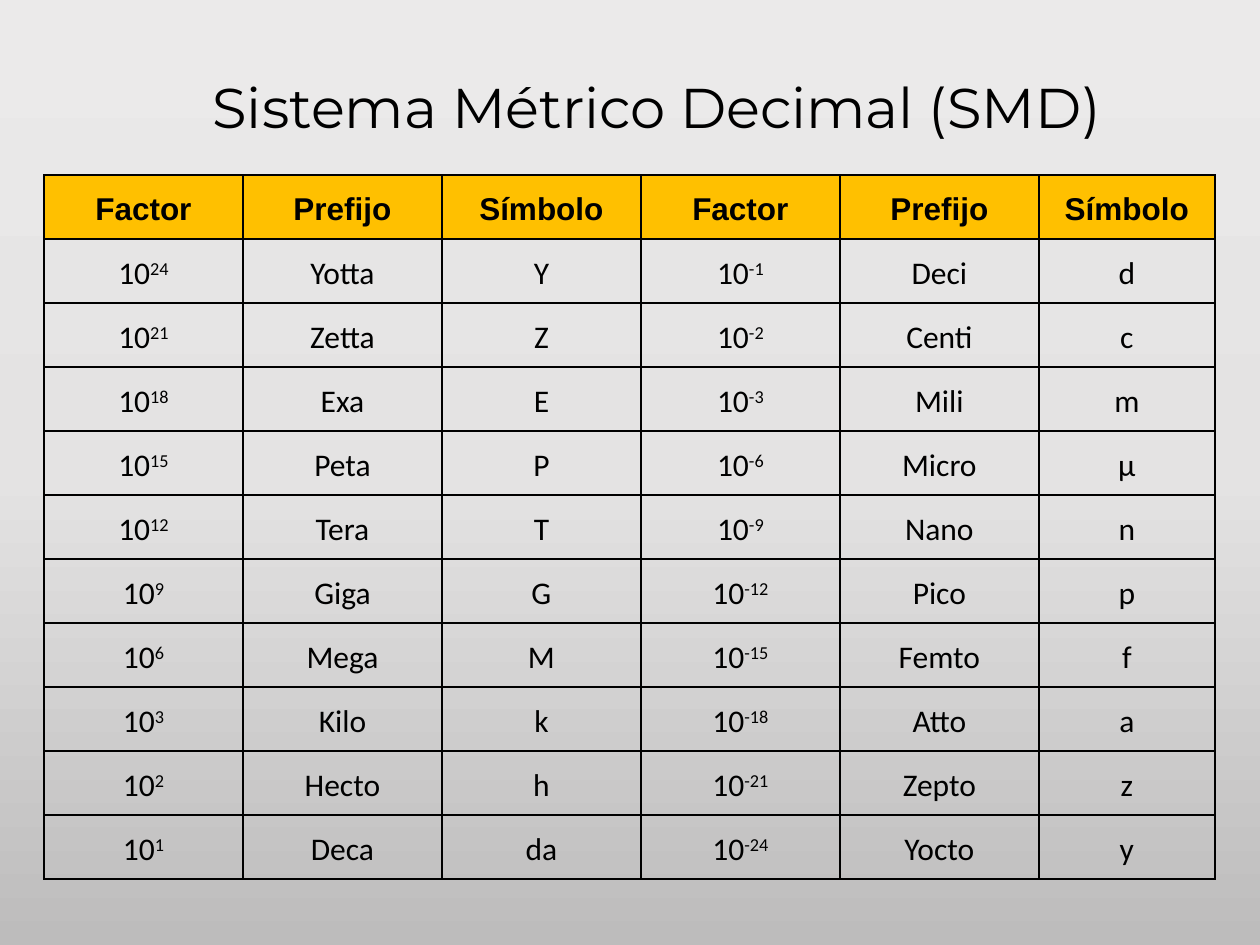
from copy import deepcopy

from lxml.etree import SubElement
from pptx import Presentation
from pptx.dml.color import RGBColor
from pptx.enum.text import MSO_ANCHOR, PP_ALIGN
from pptx.oxml.ns import qn
from pptx.util import Pt

PX = 914400 // 126
BLACK = RGBColor(0x00, 0x00, 0x00)
AMBER = RGBColor(0xFF, 0xC0, 0x00)
BACKGROUND_STOPS = [
    (0, RGBColor(0xEB, 0xEA, 0xEA)),
    (0.5, RGBColor(0xE4, 0xE3, 0xE3)),
    (1, RGBColor(0xBD, 0xBC, 0xBC)),
]

TITLE = "Sistema Métrico Decimal (SMD)"
HEADINGS = ["Factor", "Prefijo", "Símbolo"]
MULTIPLES = [
    (24, "Yotta", "Y"), (21, "Zetta", "Z"), (18, "Exa", "E"), (15, "Peta", "P"),
    (12, "Tera", "T"), (9, "Giga", "G"), (6, "Mega", "M"), (3, "Kilo", "k"),
    (2, "Hecto", "h"), (1, "Deca", "da"),
]
SUBMULTIPLES = [
    (-1, "Deci", "d"), (-2, "Centi", "c"), (-3, "Mili", "m"), (-6, "Micro", "μ"),
    (-9, "Nano", "n"), (-12, "Pico", "p"), (-15, "Femto", "f"), (-18, "Atto", "a"),
    (-21, "Zepto", "z"), (-24, "Yocto", "y"),
]

TITLE_BOX = (20, 66, 1274, 81)
TABLE_LEFT, TABLE_TOP = 44, 175
COLUMN_WIDTHS = [199] * 5 + [176]
ROW_HEIGHT = 64
CELL_MARGIN = 5

TITLE_FONT = {"name": "Montserrat", "size": Pt(32)}
HEADING_FONT = {"name": "Arial", "size": Pt(18), "bold": True}
BODY_FONT = {"name": "Calibri", "size": Pt(18), "bold": False}
CELL_FORMAT = {
    "vertical_anchor": MSO_ANCHOR.MIDDLE,
    **{f"margin_{side}": CELL_MARGIN * PX for side in ("left", "top", "right", "bottom")},
}


def set_all(target, values):
    for name, value in values.items():
        setattr(target, name, value)


def add_run(paragraph, text, font):
    run = paragraph.add_run()
    run.text = text
    set_all(run.font, font)
    run.font.color.rgb = BLACK
    return run


def paint_background(slide):
    fill = slide.background.fill
    fill.gradient()
    fill.gradient_angle = 270
    stop_list = slide.element.find(".//" + qn("a:gsLst"))
    stop_list.append(deepcopy(stop_list[-1]))
    for stop, (position, color) in zip(fill.gradient_stops, BACKGROUND_STOPS):
        stop.position = position
        stop.color.rgb = color


def add_title(slide):
    frame = slide.shapes.add_textbox(*(length * PX for length in TITLE_BOX)).text_frame
    frame.word_wrap = True
    paragraph = frame.paragraphs[0]
    paragraph.alignment = PP_ALIGN.CENTER
    add_run(paragraph, TITLE, TITLE_FONT)


def add_borders(cell):
    properties = cell._tc.get_or_add_tcPr()
    for side in ("a:lnL", "a:lnR", "a:lnT", "a:lnB"):
        line = SubElement(properties, qn(side), w=str(Pt(1)))
        fill = SubElement(line, qn("a:solidFill"))
        SubElement(fill, qn("a:srgbClr"), val=str(BLACK))


def fill_cell(cell, content, is_heading):
    set_all(cell, CELL_FORMAT)
    add_borders(cell)
    if is_heading:
        cell.fill.solid()
        cell.fill.fore_color.rgb = AMBER
    else:
        cell.fill.background()
    paragraph = cell.text_frame.paragraphs[0]
    set_all(paragraph, {"alignment": PP_ALIGN.CENTER, "line_spacing": 1.15})
    if isinstance(content, int):
        add_run(paragraph, "10", BODY_FONT)
        exponent = add_run(paragraph, str(content), BODY_FONT)
        exponent.font._element.set("baseline", "30000")
    else:
        add_run(paragraph, content, HEADING_FONT if is_heading else BODY_FONT)


def add_prefix_table(slide):
    rows = [HEADINGS * 2] + [left + right for left, right in zip(MULTIPLES, SUBMULTIPLES)]
    table = slide.shapes.add_table(
        len(rows), len(COLUMN_WIDTHS), TABLE_LEFT * PX, TABLE_TOP * PX,
        sum(COLUMN_WIDTHS) * PX, len(rows) * ROW_HEIGHT * PX,
    ).table
    set_all(table, {"first_row": False, "horz_banding": False})
    for column, width in zip(table.columns, COLUMN_WIDTHS):
        column.width = width * PX
    for row_index, row in enumerate(rows):
        table.rows[row_index].height = ROW_HEIGHT * PX
        for column_index, content in enumerate(row):
            fill_cell(table.cell(row_index, column_index), content, row_index == 0)


def main():
    presentation = Presentation()
    set_all(presentation, {"slide_width": 1260 * PX, "slide_height": 945 * PX})
    slide = presentation.slides.add_slide(presentation.slide_layouts[6])
    paint_background(slide)
    add_prefix_table(slide)
    add_title(slide)
    presentation.save("out.pptx")


if __name__ == "__main__":
    main()
